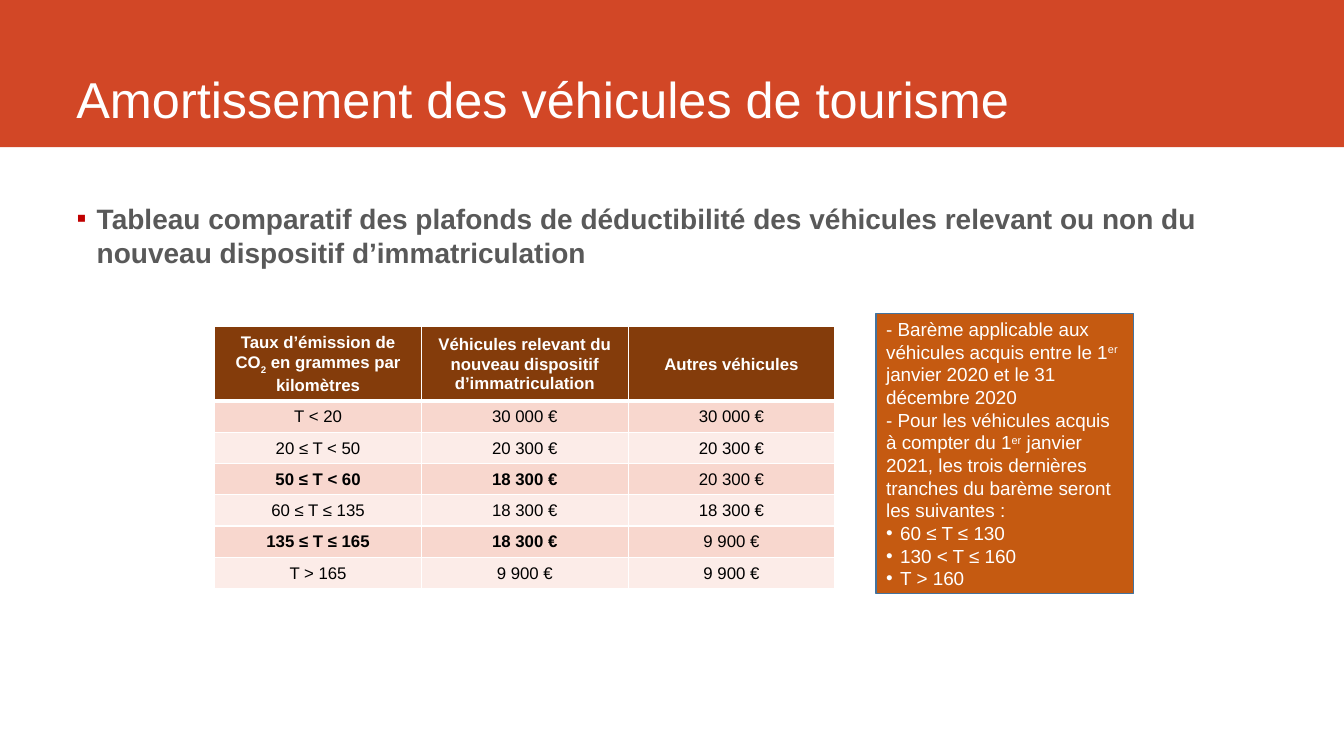
"""Build the slide on depreciation ceilings for passenger cars."""
from dataclasses import dataclass

import pptx
import pptx.dml.color
import pptx.enum.shapes
import pptx.enum.text
import pptx.oxml.ns
import pptx.util
from lxml import etree

PX = 9144
FONT = "Arial"
HUES = {
    "band": "D24726", "white": "FFFFFF", "grey": "595959", "red": "C00000",
    "note": "C55A11", "edge": "43739E", "head": "843C0B", "ink": "000000",
    "odd": "F8D7CE", "even": "FCECE8",
}
ANCHOR = pptx.enum.text.MSO_ANCHOR
ALIGN = pptx.enum.text.PP_ALIGN


@dataclass(frozen=True)
class Box:
    left: int
    top: int
    width: int
    height: int

    def emu(self) -> list[int]:
        return [n * PX for n in (self.left, self.top, self.width, self.height)]


@dataclass(frozen=True)
class Run:
    text: str
    base: int = 0


@dataclass(frozen=True)
class Para:
    runs: tuple[Run, ...]
    mark: str = ""


@dataclass(frozen=True)
class Row:
    cells: tuple[str, str, str]
    bold: int = 0


TITLE = Para((Run("Amortissement des véhicules de tourisme"),))
LEAD = Para((Run("Tableau comparatif des plafonds de déductibilité des véhicules "
                 "relevant ou non du nouveau dispositif d’immatriculation"),), "▪")
NOTES = [
    Para((Run("- Barème applicable aux véhicules acquis entre le 1"), Run("er", 30),
          Run(" janvier 2020 et le 31 décembre 2020"))),
    Para((Run("- Pour les véhicules acquis à compter du 1"), Run("er", 30),
          Run(" janvier 2021, les trois dernières tranches du barème "
              "seront les suivantes :"))),
    *(Para((Run(text),), "•") for text in ("60 ≤ T ≤ 130", "130 < T ≤ 160", "T > 160")),
]
HEADS = [
    Para((Run("Taux d’émission de CO"), Run("2", -25), Run(" en grammes par kilomètres"))),
    Para((Run("Véhicules relevant du nouveau dispositif d’immatriculation"),)),
    Para((Run("Autres véhicules"),)),
]
ROWS = [
    Row(("T < 20", "30 000 €", "30 000 €")),
    Row(("20 ≤ T < 50", "20 300 €", "20 300 €")),
    Row(("50 ≤ T < 60", "18 300 €", "20 300 €"), 2),
    Row(("60 ≤ T ≤ 135", "18 300 €", "18 300 €")),
    Row(("135 ≤ T ≤ 165", "18 300 €", "9 900 €"), 2),
    Row(("T > 165", "9 900 €", "9 900 €")),
]


def color(name: str) -> pptx.dml.color.RGBColor:
    return pptx.dml.color.RGBColor.from_string(HUES[name])


def child(node, tag: str, **attrs: str):
    item = etree.SubElement(node, pptx.oxml.ns.qn(f"a:{tag}"))
    for key, value in attrs.items():
        item.set(key, value)
    return item


def bullet(para, mark: str, hue: str, left: int, hang: int) -> None:
    props = para._p.get_or_add_pPr()
    props.set("marL", str(left * PX))
    props.set("indent", str(-hang * PX))
    child(child(props, "buClr"), "srgbClr", val=HUES[hue])
    child(props, "buFont", typeface=FONT)
    child(props, "buChar", char=mark)


def write(frame, paras: list[Para], *, size: float, hue: str, bold: bool = False,
          align=ALIGN.LEFT, line: float = 1.0, before: int = 0, after: int = 0,
          dot: str = "white", left: int = 0, hang: int = 0) -> None:
    frame.word_wrap = True
    for i, item in enumerate(paras):
        para = frame.add_paragraph() if i else frame.paragraphs[0]
        para.alignment = align
        para.line_spacing = line
        para.space_before = pptx.util.Pt(before)
        para.space_after = pptx.util.Pt(after)
        if item.mark:
            bullet(para, item.mark, dot, left, hang)
        for part in item.runs:
            run = para.add_run()
            run.text = part.text
            run.font.name = FONT
            run.font.size = pptx.util.Pt(size)
            run.font.bold = bold
            run.font.color.rgb = color(hue)
            if part.base:
                run._r.get_or_add_rPr().set("baseline", str(part.base * 1000))


def block(slide, box: Box, fill: str, edge: str = ""):
    kind = pptx.enum.shapes.MSO_SHAPE.RECTANGLE
    shape = slide.shapes.add_shape(kind, *box.emu())
    shape.shadow.inherit = False
    shape.fill.solid()
    shape.fill.fore_color.rgb = color(fill)
    if edge:
        shape.line.color.rgb = color(edge)
        shape.line.width = pptx.util.Pt(1)
    else:
        shape.line.fill.background()
    return shape


def enter(cell, para: Para, fill: str, hue: str, bold: bool, top: int, low: int) -> None:
    props = cell._tc.get_or_add_tcPr()
    for side, width in {"L": 1, "R": 1, "T": top, "B": low}.items():
        edge = child(props, f"ln{side}", w=str(pptx.util.Pt(width)))
        child(child(edge, "solidFill"), "srgbClr", val=HUES["white"])
    cell.fill.solid()
    cell.fill.fore_color.rgb = color(fill)
    cell.margin_top = cell.margin_bottom = 4 * PX
    cell.vertical_anchor = ANCHOR.MIDDLE
    write(cell.text_frame, [para], size=12, hue=hue, bold=bold,
          align=ALIGN.CENTER, line=1.05, after=8)


def grid(slide, box: Box) -> None:
    table = slide.shapes.add_table(len(ROWS) + 1, len(HEADS), *box.emu()).table
    for col in table.columns:
        col.width = box.width // len(HEADS) * PX
    for i, line in enumerate(table.rows):
        line.height = (31 if i else 73) * PX
    for j, head in enumerate(HEADS):
        enter(table.cell(0, j), head, "head", "white", True, 1, 3)
    for i, row in enumerate(ROWS, 1):
        for j, text in enumerate(row.cells):
            enter(table.cell(i, j), Para((Run(text),)), "odd" if i % 2 else "even",
                  "ink", j < row.bold, 3 if i == 1 else 1, 1)


def main() -> None:
    deck = pptx.Presentation()
    deck.slide_width, deck.slide_height = 1333 * PX, 750 * PX
    slide = deck.slides.add_slide(deck.slide_layouts[6])
    block(slide, Box(0, 0, 1333, 146), "band")

    title = slide.shapes.add_textbox(*Box(66, 0, 1176, 132).emu()).text_frame
    title.vertical_anchor = ANCHOR.BOTTOM
    write(title, [TITLE], size=36, hue="white")

    lead = slide.shapes.add_textbox(*Box(66, 200, 1176, 476).emu()).text_frame
    lead.margin_left = lead.margin_right = lead.margin_top = lead.margin_bottom = 0
    write(lead, [LEAD], size=20, hue="grey", bold=True, before=6, after=6,
          dot="red", left=30, hang=20)

    note = block(slide, Box(869, 311, 255, 278), "note", "edge").text_frame
    note.vertical_anchor = ANCHOR.MIDDLE
    write(note, NOTES, size=13.5, hue="white", left=14, hang=14)

    grid(slide, Box(213, 324, 615, 259))
    deck.save("out.pptx")


if __name__ == "__main__":
    main()
